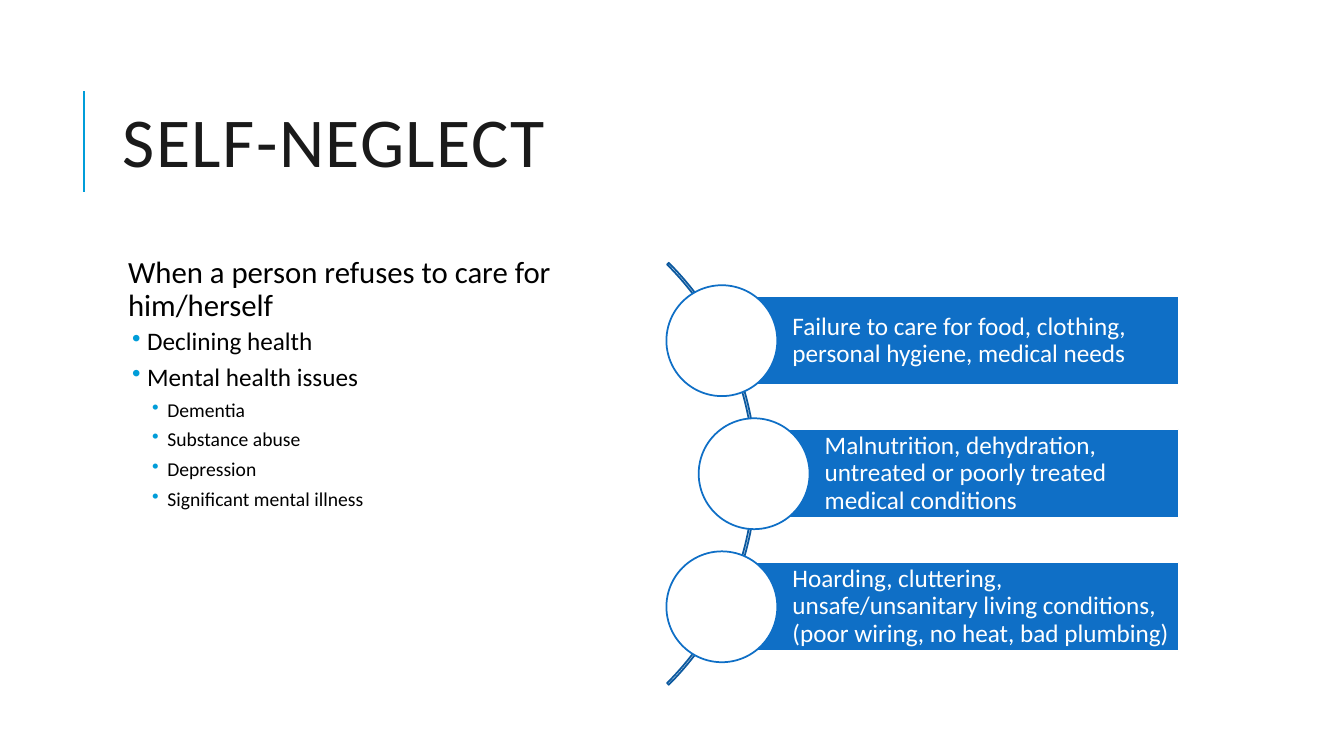
import pptx
import pptx.dml.color
import pptx.enum.shapes
import pptx.enum.text
import pptx.oxml
import pptx.oxml.ns
import pptx.util

# Content
TITLE = "SELF-NEGLECT"
OUTLINE = [  # level, text
    (0, "When a person refuses to care for him/herself"),
    (1, "Declining health"),
    (1, "Mental health issues"),
    (2, "Dementia"),
    (2, "Substance abuse"),
    (2, "Depression"),
    (2, "Significant mental illness"),
]
SIGNS = [
    "Failure to care for food, clothing, personal hygiene, medical needs",
    "Malnutrition, dehydration, untreated or poorly treated medical conditions",
    "Hoarding, cluttering, unsafe/unsanitary living conditions, "
    "(poor wiring, no heat, bad plumbing)",
]

# Style
FONT = "Calibri"
ACCENT, BLUE, DARK_BLUE = "009DD9", "0F6FC6", "0C599F"
WHITE, BLACK, TITLE_COLOR = "FFFFFF", "000000", "1A1A1A"
LEVELS = [  # size, left margin, hanging indent, space before, space after
    (22, 0.1, 0, 12, 2),
    (18, 0.29, 0.15, 2, 4),
    (14, 0.49, 0.15, 2, 4),
]

# Layout in inches
WIDTH, HEIGHT = 13.33, 7.5
TEXT_LEFT = 1.12
ARC_CENTER_X, ARC_CENTER_Y, ARC_RADIUS = 4.54, 4.7, 2.96
ROW_PITCH, BAR_HEIGHT, CIRCLE = 1.32, 0.88, 1.1
BAR_RIGHT, BAR_LEFT, MIDDLE_SHIFT = 11.69, 7.16, 0.32

inches = pptx.util.Inches
SHAPES = pptx.enum.shapes.MSO_SHAPE

prs = pptx.Presentation()
prs.slide_width, prs.slide_height = inches(WIDTH), inches(HEIGHT)
slide = prs.slides.add_slide(prs.slide_layouts[6])


def rgb(color):
    return pptx.dml.color.RGBColor.from_string(color)


def box(left, top, width, height):
    return [inches(value) for value in (left, top, width, height)]


def add_outlined(kind, area, fill, line):
    shape = slide.shapes.add_shape(kind, *box(*area))
    shape.shadow.inherit = False
    if fill:
        shape.fill.solid()
        shape.fill.fore_color.rgb = rgb(fill)
    else:
        shape.fill.background()
    shape.line.color.rgb = rgb(line)
    shape.line.width = pptx.util.Pt(1.25)
    return shape


def set_frame(frame, insets, anchor):
    frame.word_wrap = True
    frame.vertical_anchor = anchor
    (frame.margin_left, frame.margin_top,
     frame.margin_right, frame.margin_bottom) = box(*insets)


def write(paragraph, text, size, color, spacing):
    paragraph.text = text
    paragraph.alignment = pptx.enum.text.PP_ALIGN.LEFT
    paragraph.line_spacing = spacing
    font = paragraph.runs[0].font
    font.name, font.size, font.color.rgb = FONT, pptx.util.Pt(size), rgb(color)


def add_bullet(properties):
    color = pptx.oxml.parse_xml(
        f'<a:buClr {pptx.oxml.ns.nsdecls("a")}><a:srgbClr val="{ACCENT}"/></a:buClr>')
    mark = pptx.oxml.parse_xml(f'<a:buChar {pptx.oxml.ns.nsdecls("a")} char="•"/>')
    properties.extend([color, mark])


MIDDLE = pptx.enum.text.MSO_ANCHOR.MIDDLE
TOP = pptx.enum.text.MSO_ANCHOR.TOP

# Accent rule beside the title
rule = slide.shapes.add_connector(
    pptx.enum.shapes.MSO_CONNECTOR.STRAIGHT, *box(0.83, 1.9, 0.83, 0.9))
rule.line.color.rgb = rgb(ACCENT)
rule.line.width = pptx.util.Pt(1.5)
rule._element.spPr.append(
    pptx.oxml.parse_xml(f'<a:effectLst {pptx.oxml.ns.nsdecls("a")}/>'))

# Title
title = slide.shapes.add_textbox(*box(TEXT_LEFT, 0.64, 10.63, 1.64)).text_frame
set_frame(title, (0.1, 0.05, 0.1, 0.05), MIDDLE)
write(title.paragraphs[0], TITLE, 50, TITLE_COLOR, 0.8)
title.paragraphs[0].runs[0].font._element.set("spc", "100")

# Outline
outline = slide.shapes.add_textbox(*box(TEXT_LEFT, 2.5, 5.2, 4.4)).text_frame
set_frame(outline, (0.05,) * 4, TOP)
for index, (level, text) in enumerate(OUTLINE):
    paragraph = outline.add_paragraph() if index else outline.paragraphs[0]
    size, margin, hanging, before, after = LEVELS[level]
    write(paragraph, text, size, BLACK, 0.9)
    paragraph.level = level
    paragraph.space_before = pptx.util.Pt(before)
    paragraph.space_after = pptx.util.Pt(after)
    properties = paragraph._element.get_or_add_pPr()
    properties.set("marL", str(inches(margin)))
    properties.set("indent", str(inches(-hanging)))
    if hanging:
        add_bullet(properties)

# Arc behind the signs, from 315 to 45 degrees
arc = add_outlined(
    SHAPES.BLOCK_ARC,
    (ARC_CENTER_X - ARC_RADIUS, ARC_CENTER_Y - ARC_RADIUS,
     2 * ARC_RADIUS, 2 * ARC_RADIUS), None, DARK_BLUE)
for index, value in enumerate((189, 27, 0.004)):
    arc.adjustments[index] = value

# Signs: a bar with a circle centred on its left edge
for row, sign in enumerate(SIGNS):
    left = BAR_LEFT + MIDDLE_SHIFT * (row % 2)
    center = ARC_CENTER_Y + (row - 1) * ROW_PITCH
    bar = add_outlined(
        SHAPES.RECTANGLE,
        (left, center - BAR_HEIGHT / 2, BAR_RIGHT - left, BAR_HEIGHT), BLUE, WHITE)
    set_frame(bar.text_frame, (0.7, 0.05, 0.05, 0.05), MIDDLE)
    write(bar.text_frame.paragraphs[0], sign, 18, WHITE, 0.9)
    add_outlined(
        SHAPES.OVAL,
        (left - CIRCLE / 2, center - CIRCLE / 2, CIRCLE, CIRCLE), WHITE, BLUE)

prs.save("out.pptx")
